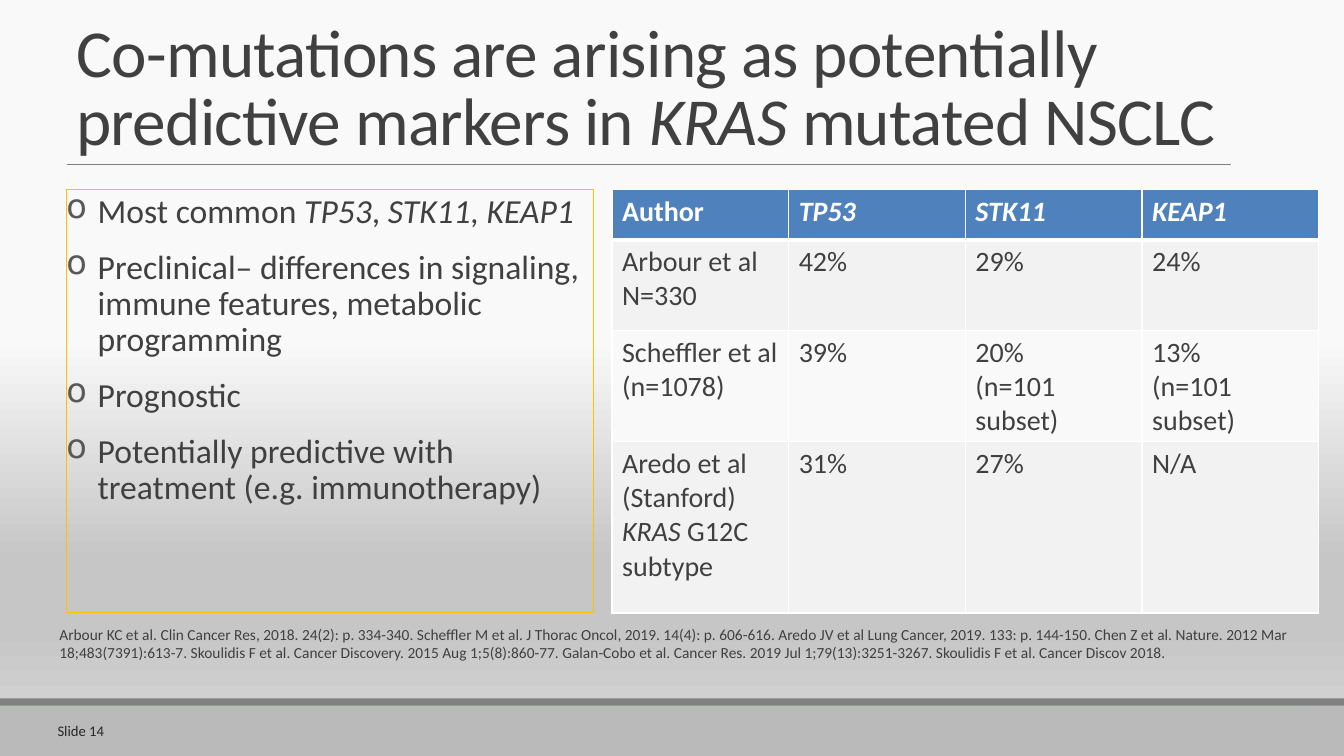
import dataclasses

import lxml.etree
import pptx
import pptx.dml.color
import pptx.enum.shapes
import pptx.enum.text
import pptx.oxml.ns
import pptx.util

Inches = pptx.util.Inches
Pt = pptx.util.Pt
qn = pptx.oxml.ns.qn


@dataclasses.dataclass(frozen=True)
class Theme:
    font: str = "Calibri"
    text: str = "404040"
    footer_text: str = "262626"
    bullet: str = "595959"
    white: str = "FFFFFF"
    header: str = "4F81BD"
    row_fills: tuple = ("F2F2F2", "F9F9F9")
    panel_line: str = "FFC000"
    rule: str = "808080"
    footer: str = "BABABA"
    blue: str = "3A89C9"
    green: str = "B2D235"
    background: tuple = ((45, "F9F9F9"), (74, "C6C6C6"), (83, "C6C6C6"), (100, "D9D9D9"))
    title_size: float = 48
    body_size: float = 24
    table_size: float = 20
    reference_size: float = 11
    number_size: float = 10.5


THEME = Theme()

BLUE_WAVE = [
    (5, 6.73), (4.38, 6.74), (3.74, 6.76), (3.08, 6.8), (2.39, 6.86), (1.65, 6.92),
    (0.85, 7.01), (0.04, 7.1), (0.04, 7.17), (0.2, 7.16), (0.93, 7.11), (1.71, 7.07),
    (2.56, 7.03), (3.45, 7.01), (4.39, 6.99), (5.37, 6.98), (6.39, 6.99), (7.44, 7.01),
    (8.52, 7.05), (9.62, 7.11), (10.74, 7.2), (13.06, 7.41), (13.26, 7.43), (13.35, 7.44),
    (10.09, 7.07), (9.2, 6.98), (8.38, 6.9), (7.63, 6.84), (6.92, 6.79), (6.26, 6.75),
    (5.62, 6.73),
]
GREEN_WAVE = [
    (5.44, 6.81), (4.85, 6.82), (4.25, 6.84), (3.63, 6.87), (2.97, 6.92), (2.27, 6.99),
    (1.51, 7.06), (0.68, 7.15), (0.03, 7.22), (0.03, 7.26), (0.27, 7.24), (0.9, 7.2),
    (1.58, 7.16), (2.33, 7.12), (3.12, 7.08), (3.97, 7.06), (4.86, 7.04), (5.79, 7.04),
    (6.76, 7.04), (7.76, 7.06), (8.78, 7.1), (9.82, 7.16), (10.88, 7.23), (13.08, 7.43),
    (13.27, 7.44), (13.36, 7.45), (10.27, 7.12), (9.43, 7.04), (8.65, 6.96), (7.93, 6.91),
    (7.26, 6.86), (6.64, 6.83), (6.03, 6.81),
]

TITLE = "Co-mutations are arising as potentially predictive markers in *KRAS* mutated NSCLC"
POINTS = [
    "Most common *TP53*, *STK11, KEAP1*",
    "Preclinical– differences in signaling, immune features, metabolic programming",
    "Prognostic",
    "Potentially predictive with treatment (e.g. immunotherapy)",
]
REFERENCES = (
    "Arbour KC et al. Clin Cancer Res, 2018. 24(2): p. 334-340. "
    "Scheffler M et al. J Thorac Oncol, 2019. 14(4): p. 606-616. "
    "Aredo JV et al Lung Cancer, 2019. 133: p. 144-150. "
    "Chen Z et al. Nature. 2012 Mar 18;483(7391):613-7. "
    "Skoulidis F et al. Cancer Discovery. 2015 Aug 1;5(8):860-77. "
    "Galan-Cobo et al. Cancer Res. 2019 Jul 1;79(13):3251-3267. "
    "Skoulidis F et al. Cancer Discov 2018."
)
MUTATION_ROWS = [
    ["Author", "*TP53*", "*STK11*", "*KEAP1*"],
    ["Arbour et al\nN=330", "42%", "29%", "24%"],
    ["Scheffler et al (n=1078)", "39%", "20%\n(n=101 subset)", "13%\n(n=101 subset)"],
    ["Aredo et al (Stanford)\n*KRAS *G12C subtype", "31%", "27%", "N/A"],
]
ROW_HEIGHTS = [0.5, 0.9, 1.08, 1.7]


def rgb(color):
    return pptx.dml.color.RGBColor.from_string(color)


def set_background(slide):
    fill = slide.background.fill
    fill.gradient()
    fill.gradient_angle = 270
    stops = slide.background._cSld.find(".//" + qn("a:gsLst"))
    for stop in list(stops):
        stops.remove(stop)
    for position, color in THEME.background:
        stop = lxml.etree.SubElement(stops, qn("a:gs"), pos=str(position * 1000))
        lxml.etree.SubElement(stop, qn("a:srgbClr"), val=color)


def fill_plain(shape, color):
    shape.shadow.inherit = False
    shape.fill.solid()
    shape.fill.fore_color.rgb = rgb(color)
    shape.line.fill.background()


def add_band(slide, top, height, color):
    shape = slide.shapes.add_shape(
        pptx.enum.shapes.MSO_SHAPE.RECTANGLE, 0, Inches(top), Inches(13.33), Inches(height))
    fill_plain(shape, color)


def add_wave(slide, points, color):
    builder = slide.shapes.build_freeform(*points[0], scale=Inches(1))
    builder.add_line_segments(points[1:], close=True)
    fill_plain(builder.convert_to_shape(), color)


def add_title_rule(slide):
    rule = slide.shapes.add_connector(
        pptx.enum.shapes.MSO_CONNECTOR.STRAIGHT,
        Inches(0.66), Inches(1.63), Inches(12.21), Inches(1.63))
    rule.line.color.rgb = rgb(THEME.rule)
    rule.line.width = Pt(0.5)
    lxml.etree.SubElement(rule._element.spPr, qn("a:effectLst"))


def write_paragraph(paragraph, text, size, color=THEME.text, bold=False):
    for index, part in enumerate(text.split("*")):
        if part:
            run = paragraph.add_run()
            run.text = part
            if index % 2:
                run.font.italic = True
    font = paragraph.font
    font.name, font.size, font.bold = THEME.font, Pt(size), bold
    font.color.rgb = rgb(color)


def add_text_box(slide, left, top, width, height, anchor="TOP"):
    box = slide.shapes.add_textbox(Inches(left), Inches(top), Inches(width), Inches(height))
    box.text_frame.word_wrap = True
    box.text_frame.vertical_anchor = pptx.enum.text.MSO_ANCHOR[anchor]
    return box


def add_title(slide):
    box = add_text_box(slide, 0.66, 0.04, 11.54, 1.59, "BOTTOM")
    paragraph = box.text_frame.paragraphs[0]
    paragraph.line_spacing = 0.85
    write_paragraph(paragraph, TITLE, THEME.title_size)
    for run in paragraph.runs:
        run.font._element.set("spc", "-50")


def add_bullet(paragraph):
    properties = paragraph._p.get_or_add_pPr()
    properties.set("marL", str(Inches(0.31)))
    properties.set("indent", str(-Inches(0.31)))
    color = lxml.etree.SubElement(properties, qn("a:buClr"))
    lxml.etree.SubElement(color, qn("a:srgbClr"), val=THEME.bullet)
    lxml.etree.SubElement(properties, qn("a:buChar"), char="o")


def add_points(slide):
    box = add_text_box(slide, 0.66, 1.88, 5.23, 4.2)
    box.line.color.rgb = rgb(THEME.panel_line)
    box.line.width = Pt(0.75)
    frame = box.text_frame
    frame.margin_left = frame.margin_right = 0
    for index, text in enumerate(POINTS):
        paragraph = frame.add_paragraph() if index else frame.paragraphs[0]
        add_bullet(paragraph)
        paragraph.line_spacing = 0.9
        paragraph.space_after = Pt(2)
        if index:
            paragraph.space_before = Pt(12)
        write_paragraph(paragraph, text, THEME.body_size)


def set_borders(cell, bottom_width):
    properties = cell._tc.get_or_add_tcPr()
    widths = {"a:lnL": 1, "a:lnR": 1, "a:lnT": 1, "a:lnB": bottom_width}
    for index, (side, width) in enumerate(widths.items()):
        line = lxml.etree.Element(qn(side), w=str(Pt(width)))
        fill = lxml.etree.SubElement(line, qn("a:solidFill"))
        lxml.etree.SubElement(fill, qn("a:srgbClr"), val=THEME.white)
        properties.insert(index, line)


def add_mutation_table(slide):
    table = slide.shapes.add_table(
        len(MUTATION_ROWS), len(MUTATION_ROWS[0]),
        Inches(6.07), Inches(1.88), Inches(7.01), Inches(sum(ROW_HEIGHTS))).table
    for row_index, texts in enumerate(MUTATION_ROWS):
        table.rows[row_index].height = Inches(ROW_HEIGHTS[row_index])
        is_header = row_index == 0
        row_fill = THEME.header if is_header else THEME.row_fills[(row_index - 1) % 2]
        color = THEME.white if is_header else THEME.text
        for column_index, text in enumerate(texts):
            cell = table.cell(row_index, column_index)
            cell.fill.solid()
            cell.fill.fore_color.rgb = rgb(row_fill)
            set_borders(cell, 3 if is_header else 1)
            for index, line in enumerate(text.split("\n")):
                frame = cell.text_frame
                paragraph = frame.add_paragraph() if index else frame.paragraphs[0]
                write_paragraph(paragraph, line, THEME.table_size, color, is_header)


def main():
    presentation = pptx.Presentation()
    presentation.slide_width, presentation.slide_height = Inches(13.33), Inches(7.5)
    slide = presentation.slides.add_slide(presentation.slide_layouts[6])
    set_background(slide)
    add_band(slide, 7, 0.5, THEME.footer)
    add_band(slide, 6.93, 0.07, THEME.rule)
    add_title_rule(slide)
    add_wave(slide, BLUE_WAVE, THEME.blue)
    add_wave(slide, GREEN_WAVE, THEME.green)
    add_title(slide)
    add_points(slide)
    number = add_text_box(slide, 0.18, 7.05, 0.95, 0.4, "MIDDLE").text_frame.paragraphs[0]
    number.alignment = pptx.enum.text.PP_ALIGN.RIGHT
    write_paragraph(number, "Slide 14", THEME.number_size, THEME.footer_text)
    references = add_text_box(slide, 0.49, 6.15, 13.08, 0.66).text_frame.paragraphs[0]
    write_paragraph(references, REFERENCES, THEME.reference_size)
    add_mutation_table(slide)
    presentation.save("out.pptx")


if __name__ == "__main__":
    main()
